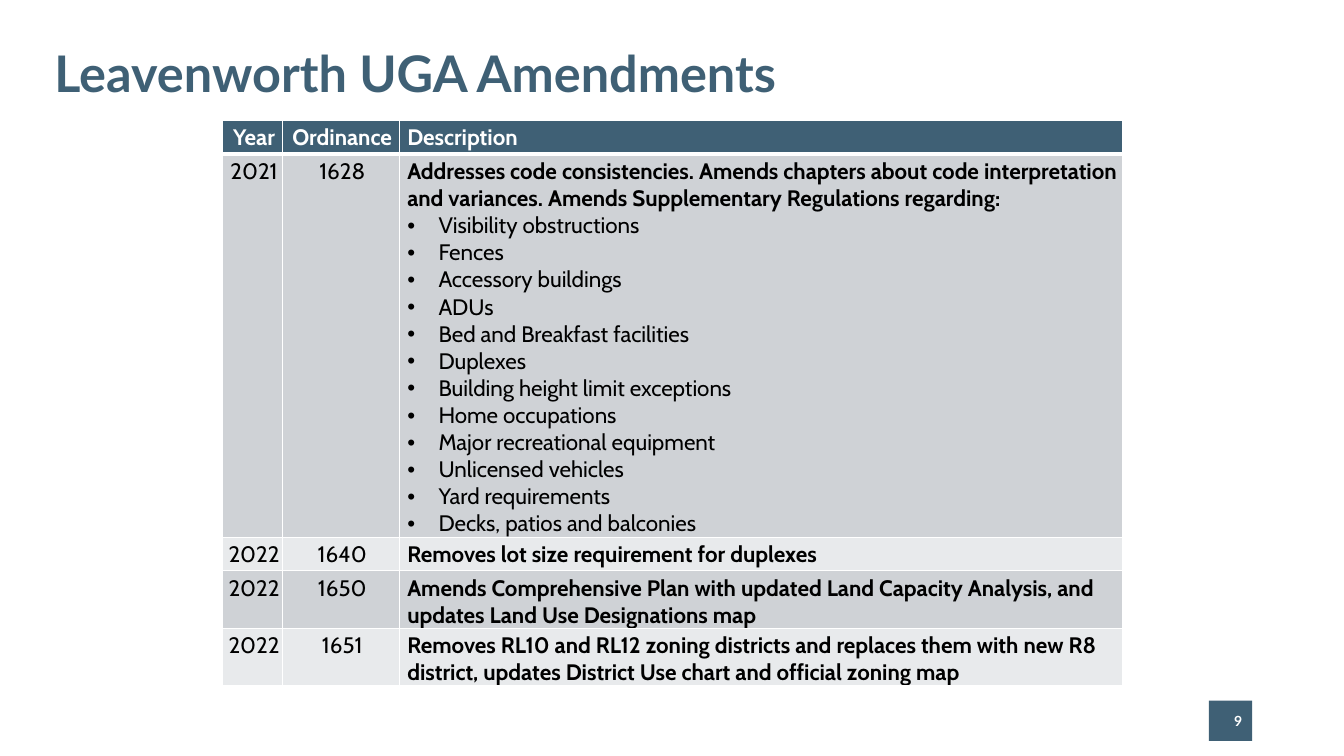
from lxml import etree
from pptx import Presentation
from pptx import util as u
from pptx.dml.color import RGBColor
from pptx.enum import shapes, text
from pptx.oxml import ns

SLATE = RGBColor(0x3F, 0x60, 0x75)
GREY = RGBColor(0xCF, 0xD2, 0xD6)
PALE = RGBColor(0xE8, 0xEA, 0xEC)
WHITE = RGBColor(0xFF, 0xFF, 0xFF)
BLACK = RGBColor(0, 0, 0)

# Table grid, in inches
TABLE_LEFT, TABLE_TOP = 2.21, 1.19
COLUMNS = [0.59, 1.16, 7.17]
ROWS = [0.34, 3.8, 0.33, 0.57, 0.57]
BULLET_INDENT = 0.31

HEADINGS = ["Year", "Ordinance", "Description"]
REGULATIONS = [
    "Visibility obstructions", "Fences", "Accessory buildings", "ADUs",
    "Bed and Breakfast facilities", "Duplexes",
    "Building height limit exceptions", "Home occupations",
    "Major recreational equipment", "Unlicensed vehicles",
    "Yard requirements", "Decks, patios and balconies",
]
AMENDMENTS = [
    ("2021", "1628", "Addresses code consistencies. Amends chapters about code "
     "interpretation and variances. Amends Supplementary Regulations regarding:",
     REGULATIONS),
    ("2022", "1640", "Removes lot size requirement for duplexes", []),
    ("2022", "1650", "Amends Comprehensive Plan with updated Land Capacity "
     "Analysis, and updates Land Use Designations map", []),
    ("2022", "1651", "Removes RL10 and RL12 zoning districts and replaces them "
     "with new R8 district, updates District Use chart and official zoning map", []),
]


def style(paragraph, font, size, color, bold):
    for run in paragraph.runs:
        run.font.name = font
        run.font.size = u.Pt(size)
        run.font.color.rgb = color
        run.font.bold = bold


def add_bullet(paragraph):
    props = paragraph._p.get_or_add_pPr()
    indent = u.Inches(BULLET_INDENT)
    props.set("marL", str(indent))
    props.set("indent", str(-indent))
    etree.SubElement(props, ns.qn("a:buFont")).set("typeface", "Arial")
    etree.SubElement(props, ns.qn("a:buChar")).set("char", "•")


def add_borders(cell, widths):
    props = cell._tc.get_or_add_tcPr()
    for side, width in zip("LRTB", widths):
        line = etree.SubElement(props, ns.qn(f"a:ln{side}"), w=str(u.Pt(width)))
        fill = etree.SubElement(line, ns.qn("a:solidFill"))
        etree.SubElement(fill, ns.qn("a:srgbClr"), val=str(WHITE))


def fill_cell(cell, lines, column, header, color):
    """The first line is the entry; any further lines are its bullets."""
    description = column == len(COLUMNS) - 1
    add_borders(cell, (1, 1, 1, 3) if header else (1, 1, 1, 1))
    cell.fill.solid()
    cell.fill.fore_color.rgb = color
    cell.margin_left = u.Inches(0.08 if description else 0.04)
    cell.margin_top = u.Inches(0.01 if header else 0.04)
    cell.margin_right, cell.margin_bottom = u.Inches(0.01), 0
    cell.vertical_anchor = (text.MSO_ANCHOR.MIDDLE if header
                            else text.MSO_ANCHOR.TOP)
    cell.text_frame.text = "\n".join(lines)
    for i, paragraph in enumerate(cell.text_frame.paragraphs):
        if i:
            add_bullet(paragraph)
        paragraph.alignment = (text.PP_ALIGN.LEFT if description
                               else text.PP_ALIGN.CENTER)
        style(paragraph, "Cabin", 16, WHITE if header else BLACK,
              header or (description and i == 0))


def add_title(slide, title):
    box = slide.shapes.add_textbox(u.Inches(0.44), u.Inches(0.4),
                                   u.Inches(9.18), u.Inches(0.71))
    frame = box.text_frame
    frame.word_wrap = True
    frame.vertical_anchor = text.MSO_ANCHOR.MIDDLE
    frame.text = title
    frame.paragraphs[0].line_spacing = 0.9
    style(frame.paragraphs[0], "Lato", 36, SLATE, True)


def add_amendments(slide):
    table = slide.shapes.add_table(
        len(ROWS), len(COLUMNS), u.Inches(TABLE_LEFT), u.Inches(TABLE_TOP),
        u.Inches(sum(COLUMNS)), u.Inches(sum(ROWS))).table
    for column, width in zip(table.columns, COLUMNS):
        column.width = u.Inches(width)
    for row, height in zip(table.rows, ROWS):
        row.height = u.Inches(height)

    for c, heading in enumerate(HEADINGS):
        fill_cell(table.cell(0, c), [heading], c, True, SLATE)
    for r, (year, ordinance, summary, topics) in enumerate(AMENDMENTS, 1):
        band = GREY if r % 2 else PALE
        for c, lines in enumerate(([year], [ordinance], [summary, *topics])):
            fill_cell(table.cell(r, c), lines, c, False, band)


def add_page_number(slide, number):
    badge = slide.shapes.add_shape(
        shapes.MSO_SHAPE.RECTANGLE, u.Inches(11.99), u.Inches(6.95),
        u.Inches(0.43), u.Inches(0.4))
    badge.shadow.inherit = False
    badge.fill.solid()
    badge.fill.fore_color.rgb = SLATE
    badge.line.fill.background()
    frame = badge.text_frame
    frame.vertical_anchor = text.MSO_ANCHOR.MIDDLE
    frame.text = number
    frame.paragraphs[0].alignment = text.PP_ALIGN.RIGHT
    style(frame.paragraphs[0], "Lato", 10, WHITE, True)


def main():
    deck = Presentation()
    deck.slide_width, deck.slide_height = u.Inches(13.33), u.Inches(7.5)
    slide = deck.slides.add_slide(deck.slide_layouts[6])
    add_title(slide, "Leavenworth UGA Amendments")
    add_page_number(slide, "9")
    add_amendments(slide)
    deck.save("out.pptx")


if __name__ == "__main__":
    main()
